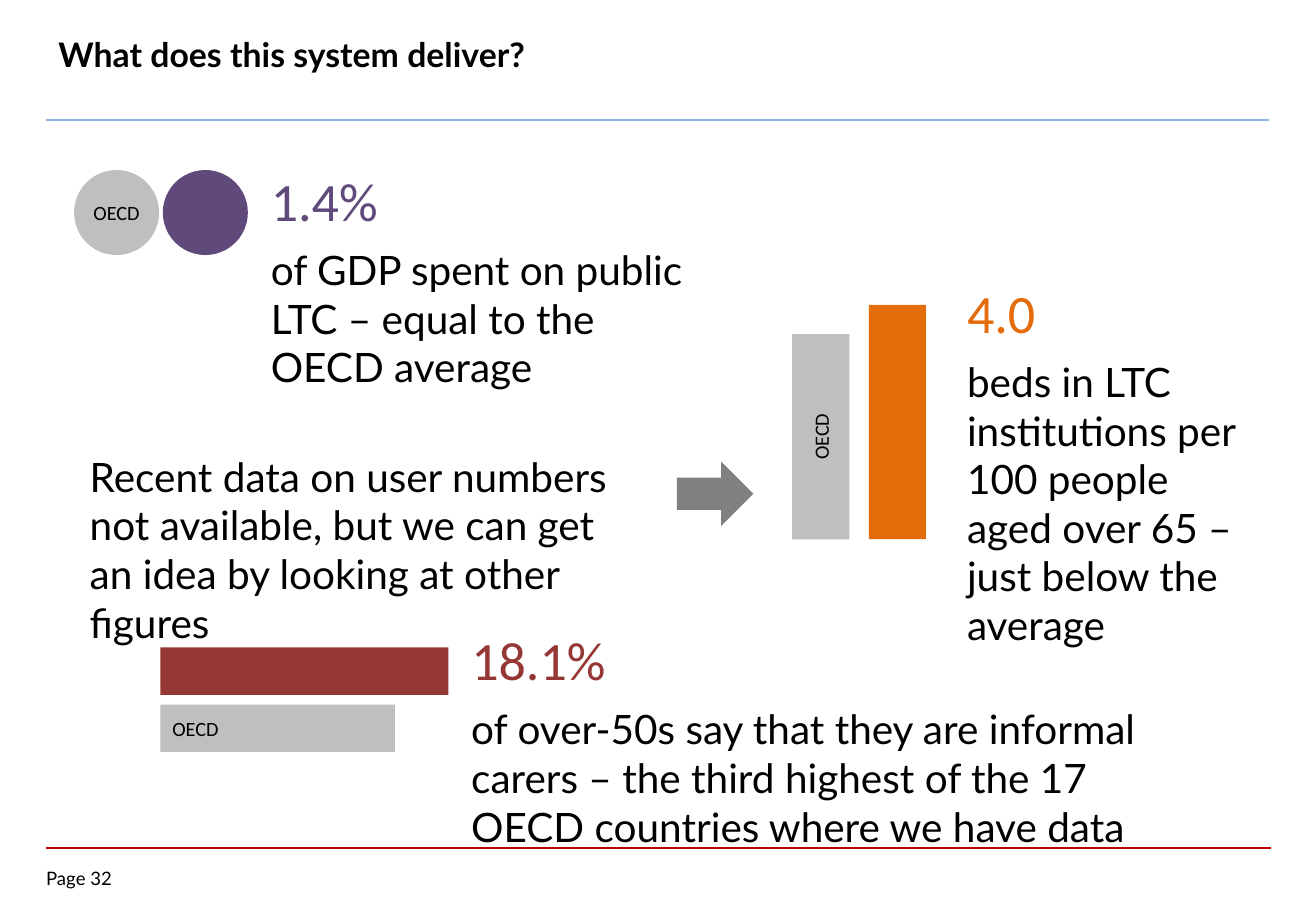
import pptx
import pptx.dml.color
import pptx.enum.shapes
import pptx.enum.text
import pptx.oxml.ns
import pptx.util
import lxml.etree

SHAPES = pptx.enum.shapes.MSO_SHAPE
ALIGN = pptx.enum.text.PP_ALIGN
ANCHOR = pptx.enum.text.MSO_ANCHOR
FIT = pptx.enum.text.MSO_AUTO_SIZE

EMU_PER_PX = 9144  # 100 px to the inch
COLOURS = {
    "text": "000000",
    "oecd": "BFBFBF",
    "spending": "604A7B",
    "carers": "953735",
    "beds": "E46C0A",
    "arrow": "808080",
    "header_rule": "8EB4E3",
    "footer_rule": "C00000",
}


def px(*lengths):
    return [pptx.util.Emu(length * EMU_PER_PX) for length in lengths]


def rgb(name):
    return pptx.dml.color.RGBColor.from_string(COLOURS[name])


def write(frame, wording, size, face="Lato", colour="text", bold=False, align=ALIGN.LEFT):
    paragraph = frame.paragraphs[0]
    paragraph.alignment = align
    run = paragraph.add_run()
    run.text = wording
    run.font.size = pptx.util.Pt(size)
    run.font.name = face
    run.font.bold = bold
    run.font.color.rgb = rgb(colour)


def add_text(slide, box, wording, size, **style):
    frame = slide.shapes.add_textbox(*px(*box)).text_frame
    frame.word_wrap = True
    frame.auto_size = FIT.SHAPE_TO_FIT_TEXT
    write(frame, wording, size, **style)
    return frame


def add_rule(slide, left, right, y, colour, width):
    rule = slide.shapes.add_connector(
        pptx.enum.shapes.MSO_CONNECTOR.STRAIGHT, *px(left, y, right, y))
    rule.line.color.rgb = rgb(colour)
    rule.line.width = pptx.util.Pt(width)
    lxml.etree.SubElement(rule.element.spPr, pptx.oxml.ns.qn("a:effectLst"))


def add_mark(slide, kind, box, colour):
    mark = slide.shapes.add_shape(kind, *px(*box))
    mark.shadow.inherit = False
    mark.fill.solid()
    mark.fill.fore_color.rgb = rgb(colour)
    mark.line.fill.background()
    return mark


def add_oecd_mark(slide, kind, box, align=ALIGN.CENTER):
    mark = add_mark(slide, kind, box, "oecd")
    mark.text_frame.vertical_anchor = ANCHOR.MIDDLE
    write(mark.text_frame, "OECD", 12, face="Calibri", align=align)
    return mark


def add_figure(slide, box, figure, meaning, colour):
    """Place a large coloured number with its explanation below."""
    left, top, width, height = box
    number_height = 64
    add_text(slide, (left, top, 195, number_height), figure, 32,
             face="Calibri", colour=colour)
    add_text(slide, (left, top + number_height, width, height - number_height),
             meaning, 24)


def add_header(slide, box):
    left, top, width, height = box
    title = slide.shapes.title
    title.left, title.top, title.width, title.height = px(*box)
    title.text_frame.auto_size = FIT.NONE
    title.text_frame.vertical_anchor = ANCHOR.MIDDLE
    write(title.text_frame, "What does this system deliver?", 20, bold=True)
    add_rule(slide, left, left + 1006, top + height + 19, "header_rule", 1.5)


def add_footer(slide, box):
    left, top, width, height = box
    add_rule(slide, left, left + width, top, "footer_rule", 1)
    page = add_text(slide, (left, top + 16, 73, 22), "Page 32", 11)
    page.margin_left = page.margin_right = page.margin_top = page.margin_bottom = 0


def add_spending(slide, box):
    left, top, width, height = box
    diameter, pitch = 70, 73
    circles_top = top + 7
    oecd = add_oecd_mark(slide, SHAPES.OVAL, (left, circles_top, diameter, diameter))
    oecd.text_frame.margin_left = oecd.text_frame.margin_right = 0
    add_mark(slide, SHAPES.OVAL,
             (left + pitch, circles_top, diameter, diameter), "spending")
    text_offset = 152
    add_figure(slide, (left + text_offset, top, width - text_offset, height), "1.4%",
               "of GDP spent on public LTC – equal to the OECD average", "spending")


def add_beds(slide, box):
    left, top, width, height = box
    bar_width, pitch, base = 47, 63, top + 219
    oecd_height, country_height = 169, 193
    oecd = add_oecd_mark(slide, SHAPES.RECTANGLE,
                         (left, base - oecd_height, bar_width, oecd_height))
    oecd.element.txBody.bodyPr.set("vert", "vert270")
    add_mark(slide, SHAPES.RECTANGLE,
             (left + pitch, base - country_height, bar_width, country_height), "beds")
    text_offset = 134
    add_figure(slide, (left + text_offset, top, width - text_offset, height), "4.0",
               "beds in LTC institutions per 100 people aged over 65 – "
               "just below the average", "beds")


def add_carers(slide, box):
    left, top, width, height = box
    bar_height, pitch, bars_top = 39, 47, top + 22
    add_mark(slide, SHAPES.RECTANGLE, (left, bars_top, 237, bar_height), "carers")
    add_oecd_mark(slide, SHAPES.RECTANGLE,
                  (left, bars_top + pitch, 193, bar_height), align=ALIGN.LEFT)
    text_offset = 246
    add_figure(slide, (left + text_offset, top, width - text_offset, height), "18.1%",
               "of over-50s say that they are informal carers – the third highest "
               "of the 17 OECD countries where we have data", "carers")


def add_user_note(slide, box):
    left, top, width, height = box
    arrow_width = 63
    add_text(slide, (left, top, 478, height),
             "Recent data on user numbers not available, but we can get an idea "
             "by looking at other figures", 24)
    add_mark(slide, SHAPES.RIGHT_ARROW,
             (left + width - arrow_width, top + 13, arrow_width, 53), "arrow")


def main():
    deck = pptx.Presentation()
    deck.slide_width, deck.slide_height = px(1083, 750)
    slide = deck.slides.add_slide(deck.slide_layouts.get_by_name("Title Only"))
    add_header(slide, (38, 9, 992, 71))
    add_footer(slide, (38, 698, 1008, 38))
    add_spending(slide, (61, 133, 513, 155))
    add_user_note(slide, (64, 367, 556, 91))
    add_beds(slide, (652, 225, 378, 237))
    add_carers(slide, (132, 511, 843, 155))
    deck.save("out.pptx")


if __name__ == "__main__":
    main()
